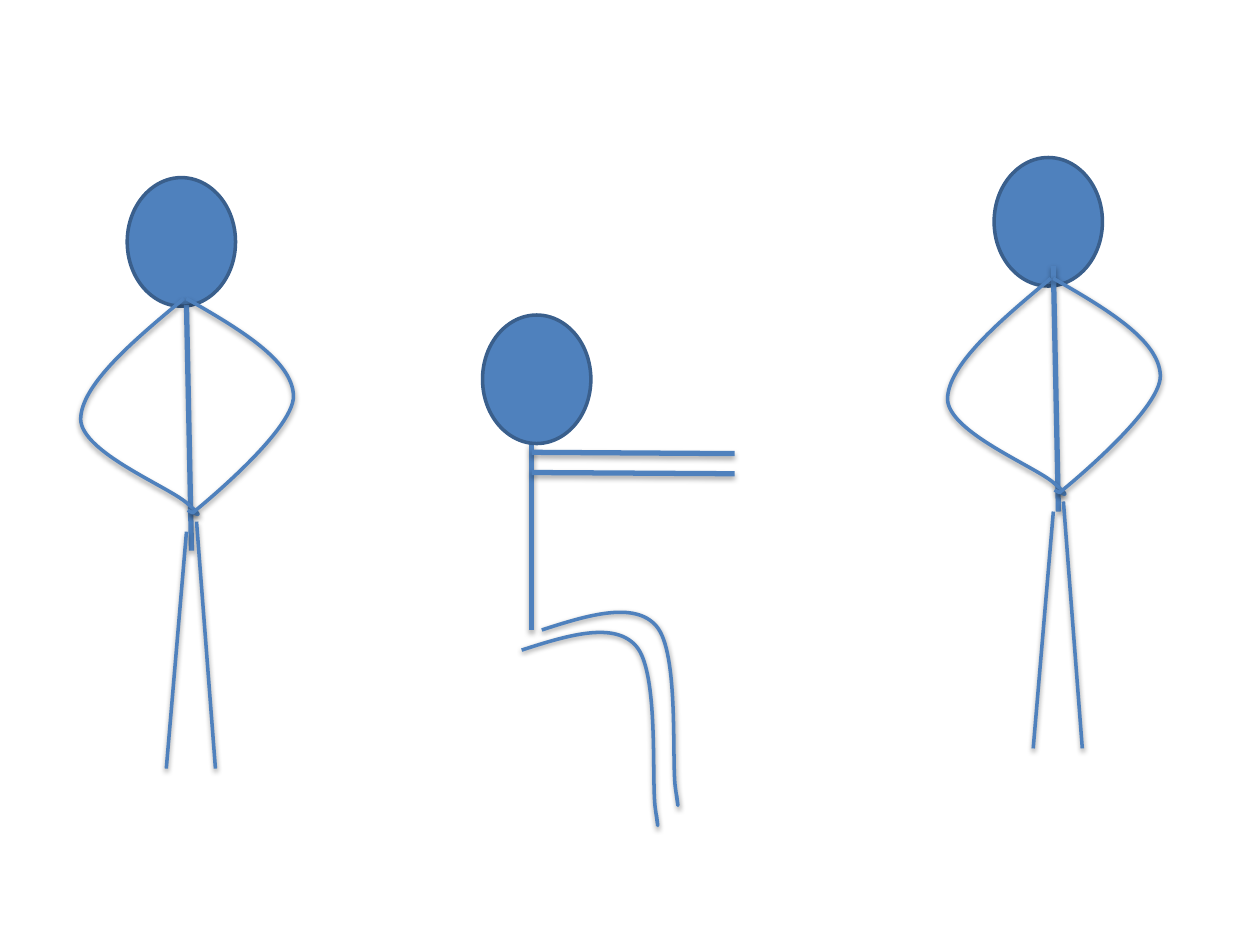
"""Draw two standing stick figures and a seated one between them."""
from dataclasses import dataclass

from lxml import etree
from pptx import Presentation
from pptx import util as u
from pptx.dml.color import RGBColor
from pptx.enum import shapes
from pptx.oxml import ns


@dataclass(frozen=True)
class Theme:
    body: str = "4F81BD"
    outline: str = "3A5F8C"
    shadow: str = "000000"
    thin: float = 2
    thick: float = 3
    blur: float = 3.1


class Sketch:
    COLS, ROWS = 10, 7.5
    HEAD = (0.86, 1.02)

    def __init__(self, prs, theme):
        self.theme = theme
        self.s = prs.slides.add_slide(prs.slide_layouts[6])
        self.cell_w = prs.slide_width / self.COLS
        self.cell_h = prs.slide_height / self.ROWS

    def at(self, x, y):
        return u.Emu(round(x * self.cell_w)), u.Emu(round(y * self.cell_h))

    def stroke(self, sp, color, width):
        sp.line.color.rgb = RGBColor.from_string(color)
        sp.line.width = u.Pt(width)

    def shade(self, sp, width):
        t = self.theme
        dist, alpha = (1.8, 35) if width == t.thick else (1.6, 38)
        effects = etree.SubElement(sp._element.spPr, ns.qn("a:effectLst"))
        outer = etree.SubElement(
            effects, ns.qn("a:outerShdw"), blurRad=str(u.Pt(t.blur)),
            dist=str(u.Pt(dist)), dir="5400000", rotWithShape="0")
        color = etree.SubElement(outer, ns.qn("a:srgbClr"), val=t.shadow)
        etree.SubElement(color, ns.qn("a:alpha"), val=str(alpha * 1000))

    def head(self, x, y):
        sp = self.s.shapes.add_shape(
            shapes.MSO_SHAPE.OVAL, *self.at(x, y), *self.at(*self.HEAD))
        sp.shadow.inherit = False
        sp.fill.solid()
        sp.fill.fore_color.rgb = RGBColor.from_string(self.theme.body)
        self.stroke(sp, self.theme.outline, self.theme.thin)

    def limb(self, start, end, width):
        sp = self.s.shapes.add_connector(
            shapes.MSO_CONNECTOR.STRAIGHT, *self.at(*start), *self.at(*end))
        self.stroke(sp, self.theme.body, width)
        self.shade(sp, width)

    def bend(self, x, y, start, curves, tail=()):
        points = [start, *(p for curve in curves for p in curve), *tail]
        placed = [self.at(x + px, y + py) for px, py in points]
        builder = self.s.shapes.build_freeform(*placed[0])
        builder.add_line_segments(placed[1:], close=False)
        sp = builder.convert_to_shape()
        segments = list(sp._element.iter(ns.qn("a:lnTo")))
        for i in range(0, 3 * len(curves), 3):
            curve = etree.Element(ns.qn("a:cubicBezTo"))
            segments[i].addprevious(curve)
            for segment in segments[i:i + 3]:
                curve.append(segment[0])
                segment.getparent().remove(segment)
        sp.fill.background()
        self.stroke(sp, self.theme.body, self.theme.thin)
        self.shade(sp, self.theme.thin)

    def standing(self, x, y, neck):
        t = self.theme
        self.head(x, y)
        self.limb((x + 0.47, y + neck), (x + 0.51, y + neck + 1.95), t.thick)
        self.limb((x + 0.55, y + 2.73), (x + 0.7, y + 4.69), t.thin)
        self.bend(x, y, (0.45, 0.96), [
            ((0.04, 1.3), (-0.37, 1.65), (-0.37, 1.92)),
            ((-0.36, 2.18), (0.32, 2.45), (0.47, 2.58)),
            ((0.61, 2.7), (0.56, 2.68), (0.51, 2.65))])
        self.bend(x, y, (0.47, 0.96), [
            ((0.89, 1.2), (1.31, 1.45), (1.32, 1.73)),
            ((1.33, 2.01), (0.52, 2.66), (0.52, 2.66))],
            [(0.52, 2.66), (0.48, 2.64)])
        self.limb((x + 0.47, y + 2.81), (x + 0.31, y + 4.69), t.thin)

    def seated(self, x, y):
        t = self.theme
        self.limb((x + 0.39, y + 1.02), (x + 0.39, y + 2.5), t.thick)
        self.head(x, y)
        for arm in (1.09, 1.25):
            self.limb((x + 0.39, y + arm), (x + 2, y + arm + 0.01), t.thick)
        for dx, dy in ((0.47, 2.5), (0.31, 2.66)):
            self.bend(x + dx, y + dy, (0, 0), [
                ((0.37, -0.12), (0.74, -0.23), (0.91, -0.03)),
                ((1.09, 0.18), (1.03, 1.03), (1.06, 1.25)),
                ((1.09, 1.47), (1.08, 1.39), (1.07, 1.31))])


def main():
    prs = Presentation()
    prs.slide_width, prs.slide_height = u.Inches(10), u.Inches(7.5)
    sketch = Sketch(prs, Theme())
    sketch.standing(7.89, 1.25, neck=0.86)
    sketch.standing(1.01, 1.41, neck=1.01)
    sketch.seated(3.83, 2.5)
    prs.save("out.pptx")


if __name__ == "__main__":
    main()
